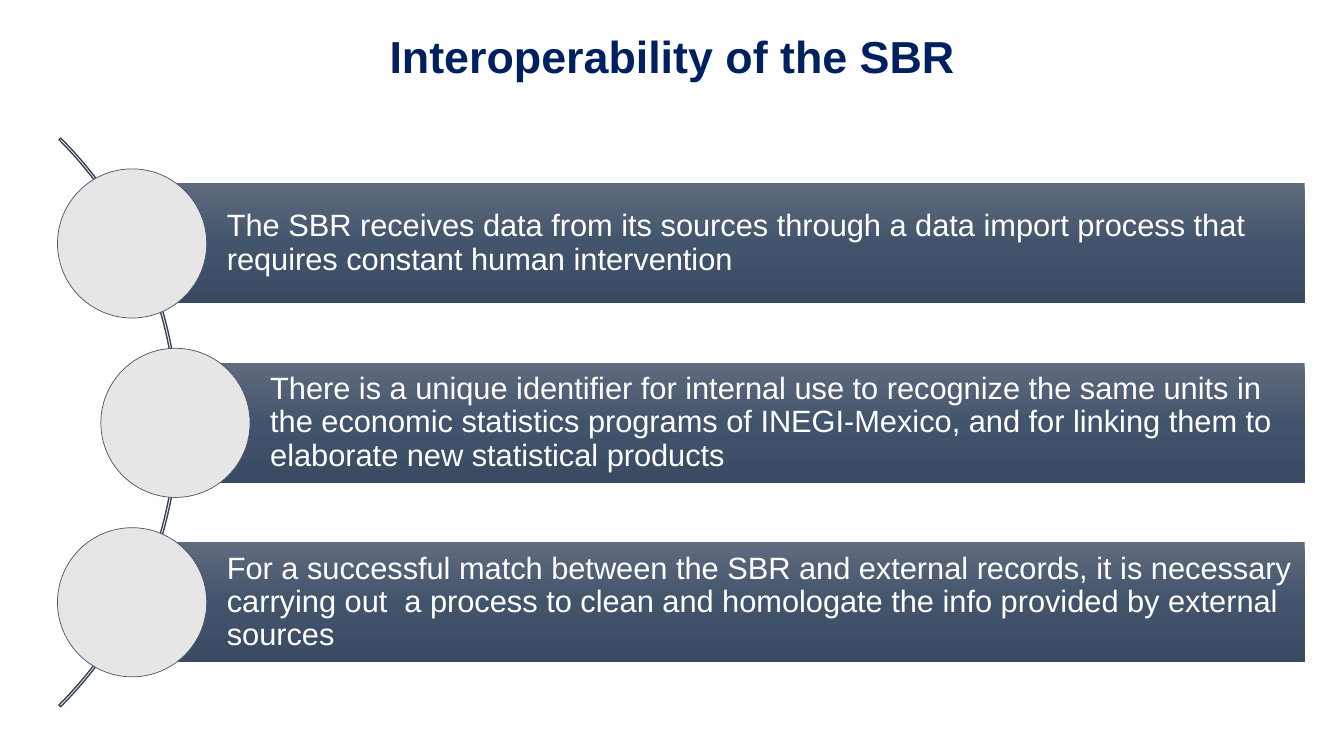
import copy

import pptx
import pptx.dml.color
import pptx.enum.shapes
import pptx.enum.text
import pptx.oxml.ns
import pptx.util

Inches, Pt = pptx.util.Inches, pptx.util.Pt
SHAPE = pptx.enum.shapes.MSO_SHAPE
ANCHOR = pptx.enum.text.MSO_ANCHOR
ALIGN = pptx.enum.text.PP_ALIGN

# Content: each point is (bar left, text)
TITLE = "Interoperability of the SBR"
POINTS = [
    (1.31, "The SBR receives data from its sources through a data import process "
           "that requires constant human intervention"),
    (1.74, "There is a unique identifier for internal use to recognize the same units "
           "in the economic statistics programs of INEGI-Mexico, and for linking them "
           "to elaborate new statistical products"),
    (1.31, "For a successful match between the SBR and external records, it is "
           "necessary carrying out  a process to clean and homologate the info "
           "provided by external sources"),
]

# Formats
TITLE_FONT = {"name": "Arial", "size": Pt(32), "bold": True}
BAR_FONT = {"name": "Arial", "size": Pt(22), "bold": False}
TITLE_FRAME = {"word_wrap": True, "vertical_anchor": ANCHOR.MIDDLE,
               "auto_size": pptx.enum.text.MSO_AUTO_SIZE.NONE}
BAR_FRAME = {"word_wrap": True, "vertical_anchor": ANCHOR.MIDDLE,
             "margin_left": Inches(0.94), "margin_right": Inches(0.06),
             "margin_top": Inches(0.06), "margin_bottom": Inches(0.06)}
BAR_STOPS = [(0, "606B7D"), (0.5, "42546C"), (1, "394A62")]

# Layout
BAR_TOP, BAR_STEP, BAR_HEIGHT, BAR_RIGHT = 1.82, 1.78, 1.19, 12.94
CIRCLE = 1.48


def color(value):
    return pptx.dml.color.RGBColor.from_string(value)


def set_all(target, values):
    for name, value in values.items():
        setattr(target, name, value)


def add_shape(kind, left, top, width, height, line=None, line_width=1):
    sp = slide.shapes.add_shape(kind, *map(Inches, (left, top, width, height)))
    sp.shadow.inherit = False
    if line:
        sp.line.color.rgb = color(line)
        sp.line.width = Pt(line_width)
    else:
        sp.line.fill.background()
    return sp


def fill_gradient(sp, stops):
    sp.fill.gradient()
    sp.fill.gradient_angle = 270
    gs_list = sp._element.spPr.find(".//" + pptx.oxml.ns.qn("a:gsLst"))
    gs_list.append(copy.deepcopy(gs_list[0]))
    for stop, (position, value) in zip(sp.fill.gradient_stops, stops):
        stop.position = position
        stop.color.rgb = color(value)


def write(tf, text, frame, font, font_color, align):
    set_all(tf, frame)
    p = tf.paragraphs[0]
    set_all(p, {"alignment": align, "line_spacing": 0.9, "space_before": Pt(0)})
    r = p.add_run()
    r.text = text
    set_all(r.font, font)
    r.font.color.rgb = color(font_color)


prs = pptx.Presentation()
prs.slide_width, prs.slide_height = Inches(13.33), Inches(7.5)
slide = prs.slides.add_slide(prs.slide_layouts[5])

# Title
title = slide.shapes.title
set_all(title, {"left": Inches(3.29), "top": Inches(0.33),
                "width": Inches(6.76), "height": Inches(0.52)})
write(title.text_frame, TITLE, TITLE_FRAME, TITLE_FONT, "002060", ALIGN.CENTER)

# Arc behind the circles, from 315 to 45 degrees
arc = add_shape(SHAPE.BLOCK_ARC, -6.21, 0.2, 7.98, 7.98, "364355")
arc.fill.background()
for i, value in enumerate((189, 27, 0.003)):
    arc.adjustments[i] = value

# Bars, each with a circle centred on its left edge
for i, (left, text) in enumerate(POINTS):
    top = BAR_TOP + i * BAR_STEP
    bar = add_shape(SHAPE.RECTANGLE, left, top, BAR_RIGHT - left, BAR_HEIGHT)
    fill_gradient(bar, BAR_STOPS)
    write(bar.text_frame, text, BAR_FRAME, BAR_FONT, "FFFFFF", ALIGN.LEFT)

    circle = add_shape(SHAPE.OVAL, left - CIRCLE / 2, top + (BAR_HEIGHT - CIRCLE) / 2,
                       CIRCLE, CIRCLE, "44546A", 0.5)
    circle.fill.solid()
    circle.fill.fore_color.rgb = color("E7E6E6")

prs.save("out.pptx")
